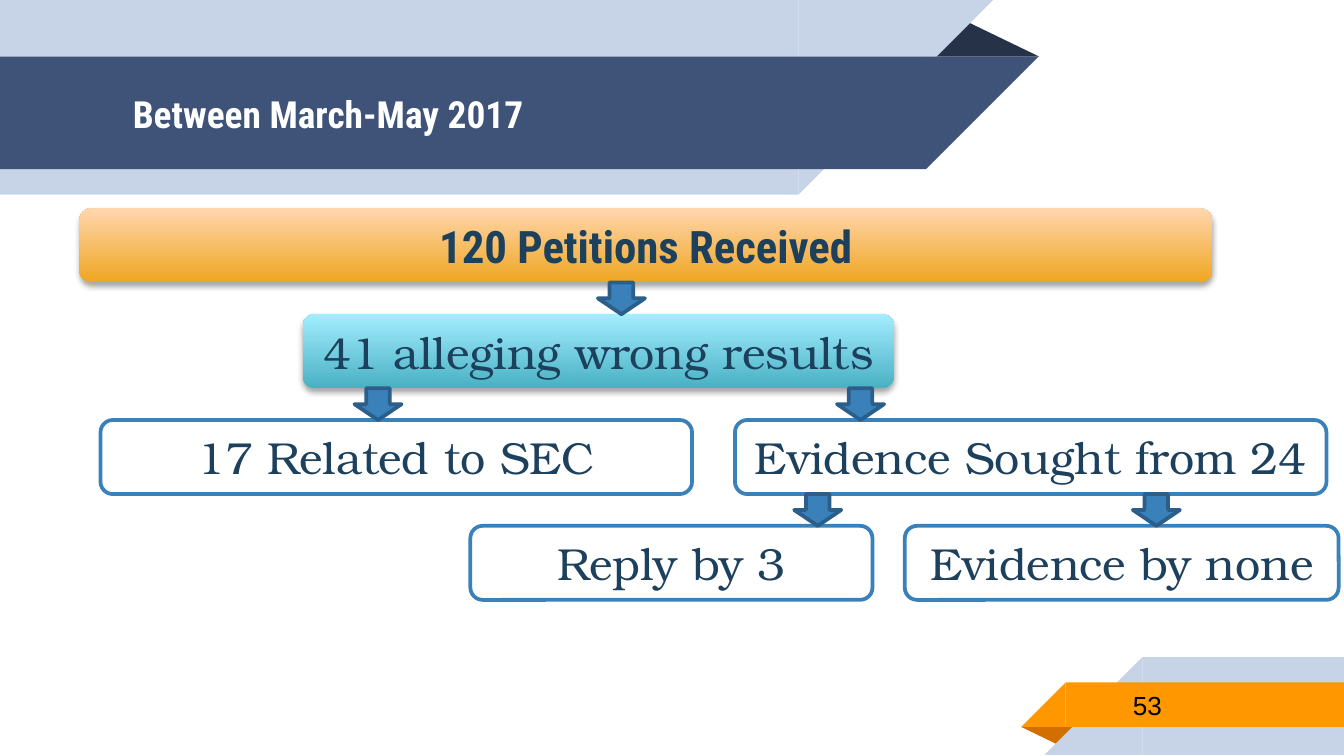
"""Build the slide that charts the petitions received between March and May 2017."""
import pptx
import pptx.dml.color
import pptx.enum.shapes
import pptx.enum.text
import pptx.oxml
import pptx.oxml.ns
import pptx.util

Cm, Pt = pptx.util.Cm, pptx.util.Pt
RGBColor = pptx.dml.color.RGBColor
Preset = pptx.enum.shapes.MSO_SHAPE
MIDDLE = pptx.enum.text.MSO_ANCHOR.MIDDLE
LEFT, CENTER = pptx.enum.text.PP_ALIGN.LEFT, pptx.enum.text.PP_ALIGN.CENTER

WHITE = RGBColor(0xFF, 0xFF, 0xFF)
BLACK = RGBColor(0x00, 0x00, 0x00)
PALE = RGBColor(0xC7, 0xD3, 0xE6)
NAVY = RGBColor(0x3F, 0x53, 0x78)
NAVY_FOLD = RGBColor(0x26, 0x32, 0x48)
ORANGE = RGBColor(0xFF, 0x98, 0x00)
ORANGE_FOLD = RGBColor(0xD2, 0x6F, 0x00)
INK = RGBColor(0x1D, 0x40, 0x5D)
BLUE = RGBColor(0x3A, 0x81, 0xBA)
BLUE_EDGE = RGBColor(0x2B, 0x5F, 0x8A)
AMBER = (RGBColor(0xF0, 0xA6, 0x21), RGBColor(0xFF, 0xD6, 0xAD))
AQUA = (RGBColor(0x49, 0xB1, 0xC3), RGBColor(0xA2, 0xED, 0xFF))

HEADLINE = {"name": "Roboto Condensed", "size": Pt(24), "bold": True}
DETAIL = {"name": "TeX Gyre Bonum", "size": Pt(24), "bold": False}

FOLDS = [
    ((17.48, 0.36, 2.16, 0.71), 0, NAVY_FOLD),
    ((19.3, 13.74, 1.09, 0.36), 180, ORANGE_FOLD),
]
HEADER_BANDS = [(0, 0, 15.09, 3.68, PALE), (0, 1.07, 17.5, 2.13, NAVY)]
FOOTER_BANDS = [(21.59, 12.42, 3.81, 1.85, PALE), (20.14, 12.9, 5.26, 0.84, ORANGE)]

CAPTIONS = [
    ("Between March-May 2017", (2.26, 1.09, 14.6, 2.13),
     {"name": "Roboto Condensed", "size": Pt(20), "bold": True}, WHITE),
    ("53", (21.16, 12.88, 4.14, 0.89),
     {"name": "Arial", "size": Pt(14), "bold": False}, BLACK),
]

LEVELS = [
    [("120 Petitions Received", 1.5, 21.41, AMBER, HEADLINE)],
    [("41 alleging wrong results", 5.72, 11.18, AQUA, DETAIL)],
    [("17 Related to SEC", 1.9, 11.18, None, DETAIL),
     ("Evidence Sought from 24", 13.89, 11.18, None, DETAIL)],
    [("Reply by 3", 8.89, 7.6, None, DETAIL),
     ("Evidence by none", 17.1, 8.2, None, DETAIL)],
]
ARROWS_BELOW = [[11.3], [6.7, 15.82], [15.01, 21.41]]

TOP, PITCH, BOX_HEIGHT, ARROW_WIDTH = 3.94, 2, 1.4, 0.89

SHADOW = (
    '<a:outerShdw %s blurRad="39370" dist="22860" dir="5400000" rotWithShape="0">'
    '<a:srgbClr val="000000"><a:alpha val="35000"/></a:srgbClr></a:outerShdw>'
    % pptx.oxml.ns.nsdecls("a")
)


def add_preset(slide, preset, place, fill=None, edge=None, rotation=0):
    shape = slide.shapes.add_shape(preset, *map(Cm, place))
    shape.shadow.inherit = False
    shape.rotation = rotation
    if fill is not None:
        shape.fill.solid()
        shape.fill.fore_color.rgb = fill
    if edge is None:
        shape.line.fill.background()
    else:
        shape.line.color.rgb = edge
        shape.line.width = Pt(2)
    return shape


def write(shape, text, font_values, colour, alignment, frame_values):
    frame = shape.text_frame
    for key, value in frame_values.items():
        setattr(frame, key, value)
    paragraph = frame.paragraphs[0]
    paragraph.alignment = alignment
    run = paragraph.add_run()
    run.text = text
    for key, value in font_values.items():
        setattr(run.font, key, value)
    run.font.color.rgb = colour


def add_ribbons(slide):
    for place, rotation, colour in FOLDS:
        fold = add_preset(slide, Preset.ISOSCELES_TRIANGLE, place, colour, rotation=rotation)
        fold.adjustments[0] = 0.32
    for bands, rotation in ((HEADER_BANDS, 90), (FOOTER_BANDS, 270)):
        for left, top, width, height, colour in bands:
            tip = left + width if rotation == 90 else left - height
            add_preset(slide, Preset.RECTANGLE, (left, top, width, height), colour)
            add_preset(slide, Preset.RIGHT_TRIANGLE, (tip, top, height, height),
                       colour, rotation=rotation)


def add_captions(slide):
    margins = {f"margin_{side}": Cm(0.25) for side in ("left", "top", "right", "bottom")}
    frame_values = {"word_wrap": True, "vertical_anchor": MIDDLE, **margins}
    for text, place, font_values, colour in CAPTIONS:
        caption = slide.shapes.add_textbox(*map(Cm, place))
        write(caption, text, font_values, colour, LEFT, frame_values)


def add_flow(slide):
    frame_values = {"word_wrap": False, "vertical_anchor": MIDDLE}
    for level, boxes in enumerate(LEVELS):
        for text, left, width, gradient, font_values in boxes:
            place = (left, TOP + level * PITCH, width, BOX_HEIGHT)
            if gradient:
                box = add_preset(slide, Preset.ROUNDED_RECTANGLE, place)
                box.fill.gradient()
                box.fill.gradient_angle = 90
                for stop, colour in zip(box.fill.gradient_stops, gradient):
                    stop.color.rgb = colour
                effects = box.element.spPr.find(pptx.oxml.ns.qn("a:effectLst"))
                effects.append(pptx.oxml.parse_xml(SHADOW))
            else:
                box = add_preset(slide, Preset.ROUNDED_RECTANGLE, place, WHITE, BLUE)
            write(box, text, font_values, INK, CENTER, frame_values)
    for level, lefts in enumerate(ARROWS_BELOW):
        top = TOP + level * PITCH + BOX_HEIGHT
        for left in lefts:
            place = (left, top, ARROW_WIDTH, PITCH - BOX_HEIGHT)
            add_preset(slide, Preset.DOWN_ARROW, place, BLUE, BLUE_EDGE)


def main():
    deck = pptx.Presentation()
    deck.slide_width, deck.slide_height = Cm(25.4), Cm(14.29)
    slide = deck.slides.add_slide(deck.slide_layouts[6])
    add_ribbons(slide)
    add_captions(slide)
    add_flow(slide)
    deck.save("out.pptx")


if __name__ == "__main__":
    main()
